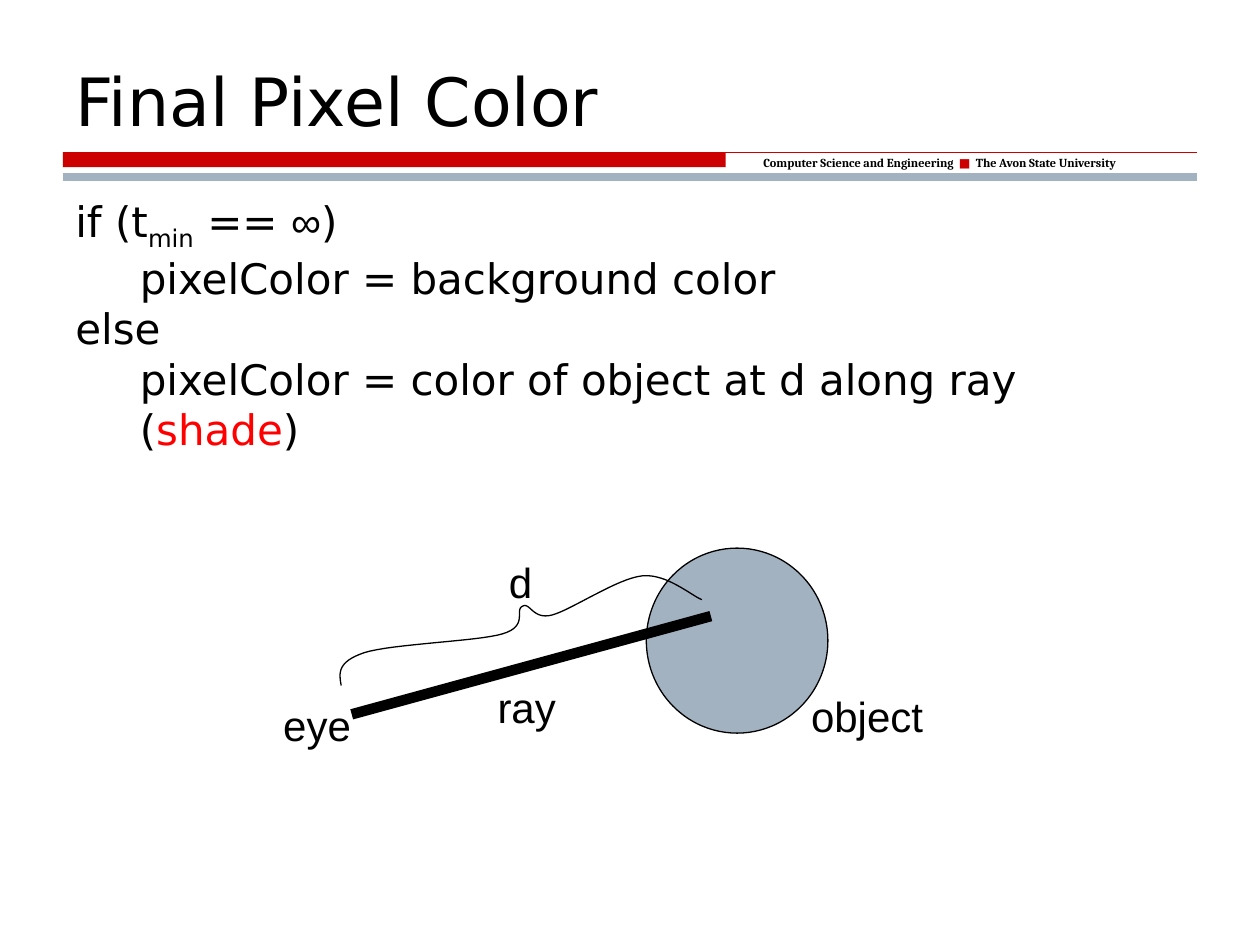
import pptx
import pptx.dml.color
import pptx.enum.shapes
import pptx.enum.text
import pptx.oxml.ns
import pptx.util
from lxml import etree
from pptx.util import Cm

BLACK = pptx.dml.color.RGBColor(0x00, 0x00, 0x00)
CRIMSON = pptx.dml.color.RGBColor(0xCC, 0x00, 0x00)
RED = pptx.dml.color.RGBColor(0xFF, 0x00, 0x00)
STEEL = pptx.dml.color.RGBColor(0xA3, 0xB2, 0xC1)

presentation = pptx.Presentation()
presentation.slide_width, presentation.slide_height = Cm(25.4), Cm(19.05)
slide = presentation.slides.add_slide(presentation.slide_layouts[6])


def add_text(box, paragraphs, size, wrap=True, anchor="TOP"):
    """Add a text box; a paragraph is (indent in cm, runs), a run (text, format)."""
    frame = slide.shapes.add_textbox(*map(Cm, box)).text_frame
    frame.word_wrap = wrap
    frame.vertical_anchor = pptx.enum.text.MSO_ANCHOR[anchor]
    for number, (indent, runs) in enumerate(paragraphs):
        paragraph = frame.add_paragraph() if number else frame.paragraphs[0]
        if indent:
            paragraph._p.get_or_add_pPr().set("marL", str(Cm(indent)))
        for text, changes in runs:
            run = paragraph.add_run()
            run.text = text
            run_format = {"name": "DejaVu Sans", "color": BLACK, **changes}
            run.font.size = pptx.util.Pt(size)
            run.font.color.rgb = run_format.pop("color")
            if "baseline" in run_format:
                run._r.get_or_add_rPr().set("baseline", run_format.pop("baseline"))
            for attribute, value in run_format.items():
                setattr(run.font, attribute, value)


def add_line(start, end, color, width):
    line = slide.shapes.add_connector(
        pptx.enum.shapes.MSO_CONNECTOR.STRAIGHT, *map(Cm, start + end))
    line.line.color.rgb = color
    line.line.width = pptx.util.Pt(width)
    etree.SubElement(line._element.spPr, pptx.oxml.ns.qn("a:effectLst"))


# Header band
band = slide.shapes.add_shape(
    pptx.enum.shapes.MSO_SHAPE.RECTANGLE, Cm(1.27), Cm(3.07), Cm(13.36), Cm(0.3))
band.shadow.inherit = False
band.fill.solid()
band.fill.fore_color.rgb = CRIMSON
band.line.fill.background()
add_line((1.27, 3.07), (24.13, 3.07), CRIMSON, 0.75)
affiliation = {"name": "Cambria", "bold": True}
add_text((15.14, 3, 8.66, 0.56), [(0, [
    ("Computer Science and Engineering  ", affiliation),
    ("■", {"color": CRIMSON}),
    ("  The Avon State University", affiliation),
])], 7, wrap=False)
add_line((1.27, 3.56), (24.13, 3.56), STEEL, 4.5)

# Title and pseudocode
add_text((1.27, 0.64, 22.86, 2.31), [(0, [("Final Pixel Color", {})])], 38,
         anchor="BOTTOM")
add_text((1.27, 3.81, 22.86, 14.6), [
    (0, [("if (t", {}), ("min", {"baseline": "-25000"}), (" == ", {}),
         ("∞", {"name": "Arial"}), (")", {})]),
    (1.3, [("pixelColor = background color", {})]),
    (0, [("else", {})]),
    (1.3, [("pixelColor = color of object at d along ray (", {}),
           ("shade", {"color": RED}), (")", {})]),
], 24)

# Ray hitting the object
sphere = slide.shapes.add_shape(
    pptx.enum.shapes.MSO_SHAPE.OVAL, Cm(13.03), Cm(11.05), Cm(3.66), Cm(3.73))
sphere.shadow.inherit = False
sphere.fill.solid()
sphere.fill.fore_color.rgb = STEEL
sphere.line.color.rgb = BLACK
sphere.line.width = pptx.util.Pt(0.75)
add_line((7.09, 14.4), (14.33, 12.42), BLACK, 6)

# Curved brace over the distance d: cubic Bezier pieces, sampled evenly
brace_start = (6.88, 13.82)
brace_pieces = [
    ((6.83, 13.56), (6.81, 13.34), (7.34, 13.16)),
    ((7.9, 12.98), (9.63, 12.93), (10.13, 12.78)),
    ((10.67, 12.62), (10.36, 12.29), (10.54, 12.22)),
    ((10.69, 12.14), (10.74, 12.5), (11.13, 12.4)),
    ((11.53, 12.29), (12.45, 11.66), (12.95, 11.61)),
    ((13.44, 11.56), (13.94, 12.01), (14.15, 12.09)),
]
STEPS = 16
brace_points = []
corner = brace_start
for piece in brace_pieces:
    for step in range(1, STEPS + 1):
        t = step / STEPS
        weights = ((1 - t) ** 3, 3 * t * (1 - t) ** 2, 3 * t ** 2 * (1 - t), t ** 3)
        brace_points.append(tuple(
            Cm(sum(w * p[axis] for w, p in zip(weights, (corner, *piece))))
            for axis in (0, 1)))
    corner = piece[-1]
builder = slide.shapes.build_freeform(*map(Cm, brace_start))
builder.add_line_segments(brace_points, close=False)
brace = builder.convert_to_shape()
brace.shadow.inherit = False
brace.fill.background()
brace.line.color.rgb = BLACK
brace.line.width = pptx.util.Pt(0.75)

for label, left, top, width in [
    ("d", 10.01, 11.1, 0.99),
    ("ray", 9.78, 13.61, 1.75),
    ("eye", 5.46, 13.97, 1.88),
    ("object", 16.1, 13.79, 2.92),
]:
    add_text((left, top, width, 1.27), [(0, [(label, {"name": "Arial"})])], 24,
             wrap=False)

presentation.save("out.pptx")
